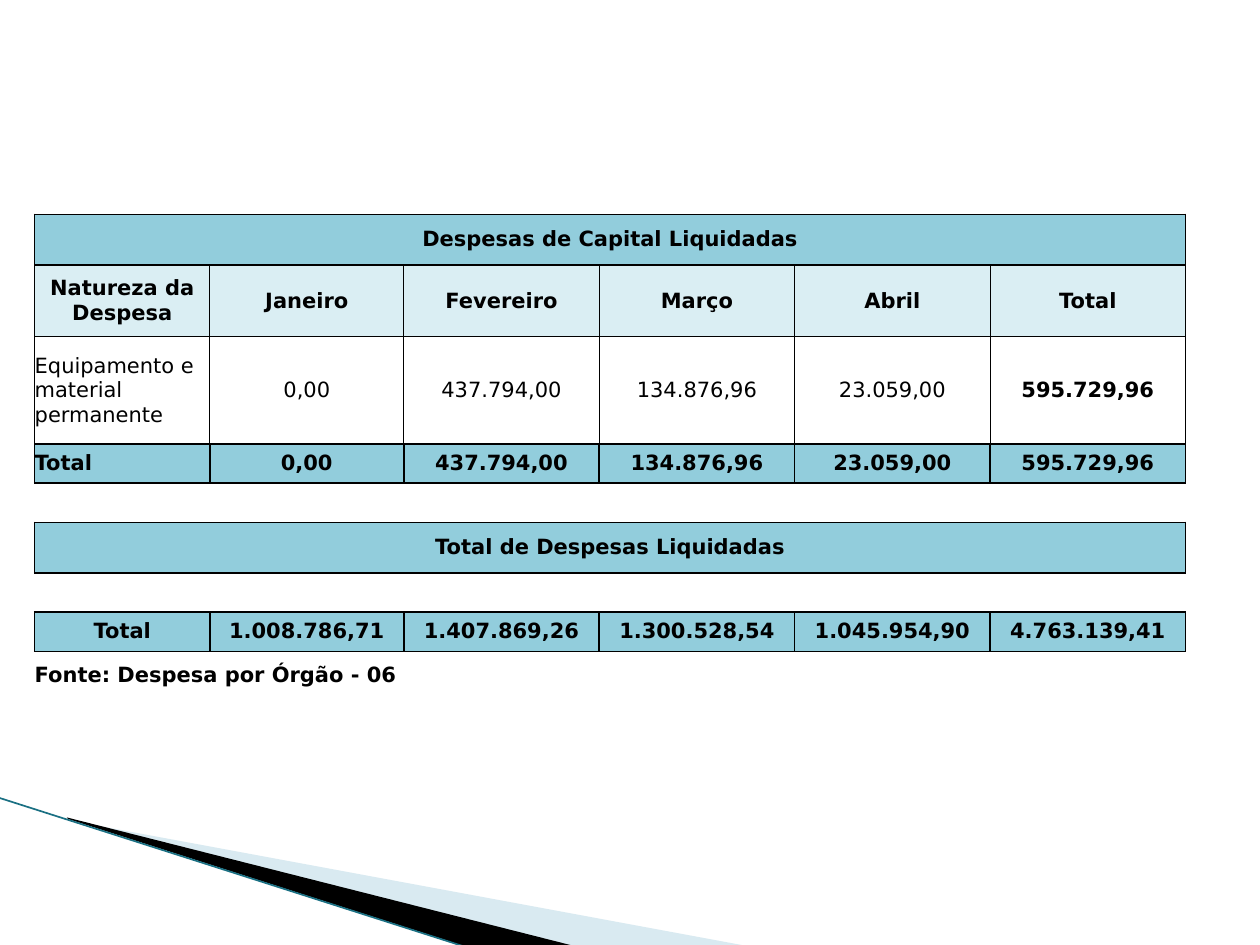
from lxml.etree import SubElement
from pptx import Presentation
from pptx.dml.color import RGBColor
from pptx.enum.text import MSO_ANCHOR, PP_ALIGN
from pptx.oxml.ns import qn
from pptx.util import Cm, Pt

COLORS = {"black": "000000", "white": "FFFFFF", "band": "92CDDC",
          "head": "DAEEF3", "wedge": "A0CBDC", "edge": "1A7083"}
WIDTHS = [3.53, 3.91] + [3.94] * 4
BLANK = [""] * 6

# Border widths in points, by side
FULL = dict.fromkeys("LRTB", 1)
HEAD = {"L": 0.5, "R": 0.5, "T": 1, "B": 0.5}
BODY = {"L": 0.5, "R": 0.5, "T": 0.5, "B": 1}
GAP = {"T": 1, "B": 1}
FOOT = {"T": 1}

# Height, fill, borders, merged columns, texts
ROWS = [
    (1.02, "band", FULL, 6, ["Despesas de Capital Liquidadas"] + BLANK[1:]),
    (1.45, "head", HEAD, 1, ["Natureza da Despesa", "Janeiro", "Fevereiro",
                             "Março", "Abril", "Total"]),
    (2.16, "white", BODY, 1, ["Equipamento e material permanente", "0,00",
                              "437.794,00", "134.876,96", "23.059,00",
                              "595.729,96"]),
    (0.79, "band", FULL, 1, ["Total", "0,00", "437.794,00", "134.876,96",
                             "23.059,00", "595.729,96"]),
    (0.79, "white", GAP, 1, BLANK),
    (1.02, "band", FULL, 6, ["Total de Despesas Liquidadas"] + BLANK[1:]),
    (0.79, "white", GAP, 1, BLANK),
    (0.79, "band", FULL, 1, ["Total", "1.008.786,71", "1.407.869,26",
                             "1.300.528,54", "1.045.954,90",
                             "4.763.139,41"]),
    (0.74, "white", FOOT, 2, ["Fonte: Despesa por Órgão - 06"] + BLANK[1:]),
]
ITEM, SUM, NOTE = 2, 3, 8  # rows whose first cell is left-aligned


def color(name):
    return RGBColor.from_string(COLORS[name])


def put(target, values):
    for key, value in values.items():
        setattr(target, key, value)


def add_wedge(slide, points, name, alpha=100):
    spots = [(Cm(x), Cm(y)) for x, y in points]
    draft = slide.shapes.build_freeform(*spots[0])
    draft.add_line_segments(spots[1:], close=True)
    shape = draft.convert_to_shape()
    shape.shadow.inherit = False
    shape.line.fill.background()
    shape.fill.solid()
    shape.fill.fore_color.rgb = color(name)
    tone = shape.fill._xPr.find(qn("a:solidFill"))[0]
    SubElement(tone, qn("a:alpha"), val=str(alpha * 1000))


def add_edge(slide, start, end):
    line = slide.shapes.add_connector(1, *map(Cm, start + end))
    line.line.width = Pt(0.95)
    line.line.color.rgb = color("edge")
    SubElement(line._element.spPr, qn("a:effectLst"))


def set_sides(cell, sides):
    props = cell._tc.get_or_add_tcPr()
    for side in "LRTB":
        width = sides.get(side, 0)
        line = SubElement(props, qn("a:ln" + side), w=str(Pt(width)))
        if width:
            fill = SubElement(line, qn("a:solidFill"))
            SubElement(fill, qn("a:srgbClr"), val=COLORS["black"])
        else:
            SubElement(line, qn("a:noFill"))


def set_text(cell, text, align, bold):
    para = cell.text_frame.paragraphs[0]
    para.alignment = align
    if text:
        run = para.add_run()
        run.text = text
        put(run.font, {"size": Pt(12), "name": "DejaVu Sans", "bold": bold})
        run.font.color.rgb = color("black")
    else:
        SubElement(para._p, qn("a:endParaRPr"), sz="1200")


def fill_row(table, r, row):
    height, fill, sides, span, texts = row
    table.rows[r].height = Cm(height)
    for c, text in enumerate(texts):
        cell = table.cell(r, c)
        left = c == 0 and r in (ITEM, SUM, NOTE)
        anchor = MSO_ANCHOR.BOTTOM if r == NOTE else MSO_ANCHOR.MIDDLE
        put(cell, {"margin_left": 0, "margin_right": 0, "margin_top": 0,
                   "margin_bottom": 0, "vertical_anchor": anchor})
        set_sides(cell, sides)
        cell.fill.solid()
        cell.fill.fore_color.rgb = color(fill)
        set_text(cell, text, PP_ALIGN.LEFT if left else PP_ALIGN.CENTER,
                 r != ITEM or c == 5)
    if span > 1:
        table.cell(r, 0).merge(table.cell(r, span - 1))


def add_grid(slide):
    high = sum(row[0] for row in ROWS)
    frame = slide.shapes.add_table(len(ROWS), len(WIDTHS), Cm(0.7), Cm(4.32),
                                   Cm(sum(WIDTHS)), Cm(high))
    table = frame.table
    put(table, {"first_row": False, "horz_banding": False})
    for col, width in zip(table.columns, WIDTHS):
        col.width = Cm(width)
    for r, row in enumerate(ROWS):
        fill_row(table, r, row)


def main():
    deck = Presentation()
    put(deck, {"slide_width": Cm(25.4), "slide_height": Cm(19.05)})
    slide = deck.slides.add_slide(deck.slide_layouts[6])

    # Corner decoration
    add_wedge(slide, [(1.4, 16.54), (15.11, 19.08), (11.58, 19.08),
                      (1.4, 16.51)], "wedge", 40)
    add_wedge(slide, [(1.35, 16.48), (11.61, 19.08), (9.45, 19.1),
                      (1.37, 16.51)], "black")
    add_edge(slide, (-0.03, 16.08), (9.42, 19.1))

    # Expense table
    add_grid(slide)
    deck.save("out.pptx")


if __name__ == "__main__":
    main()
